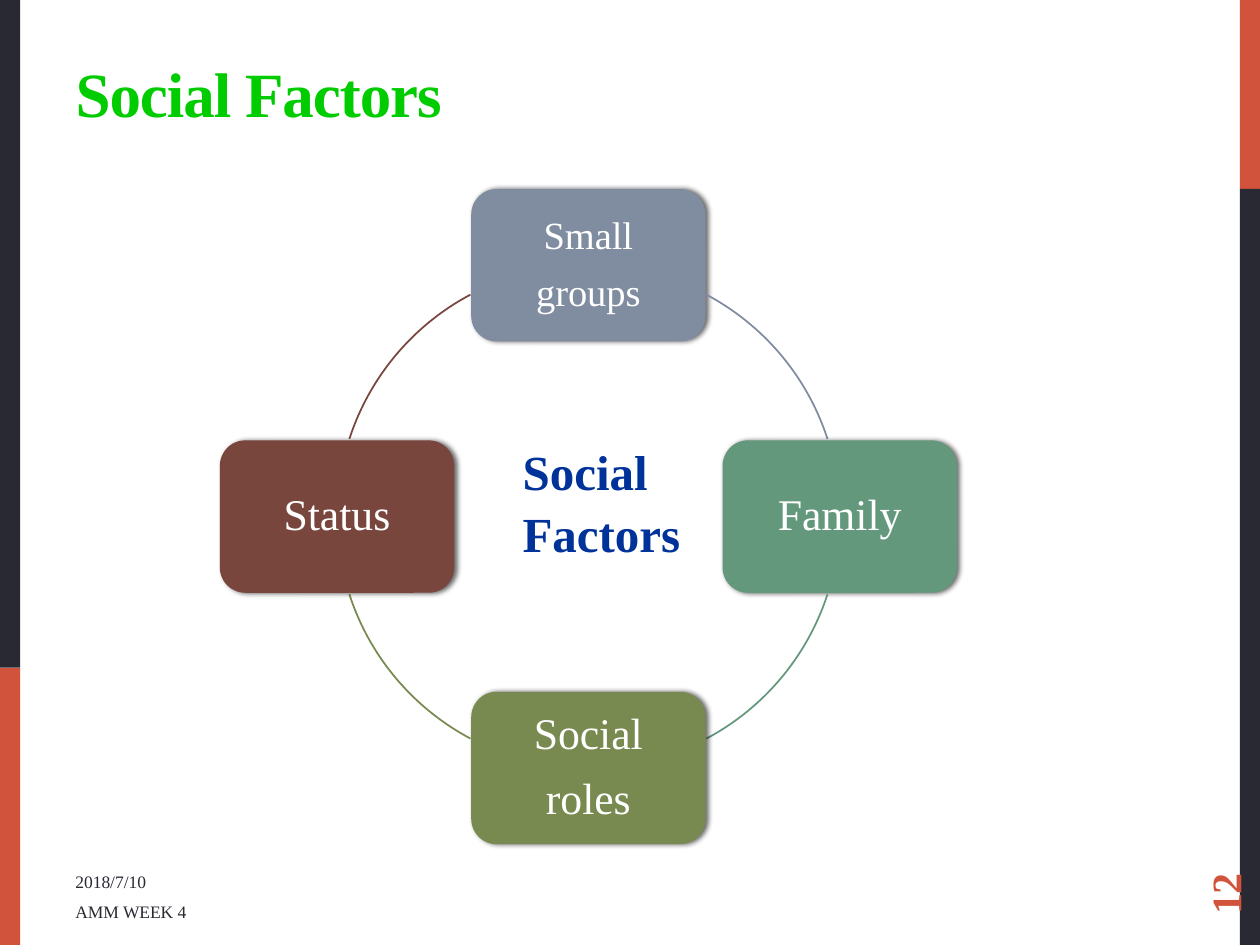
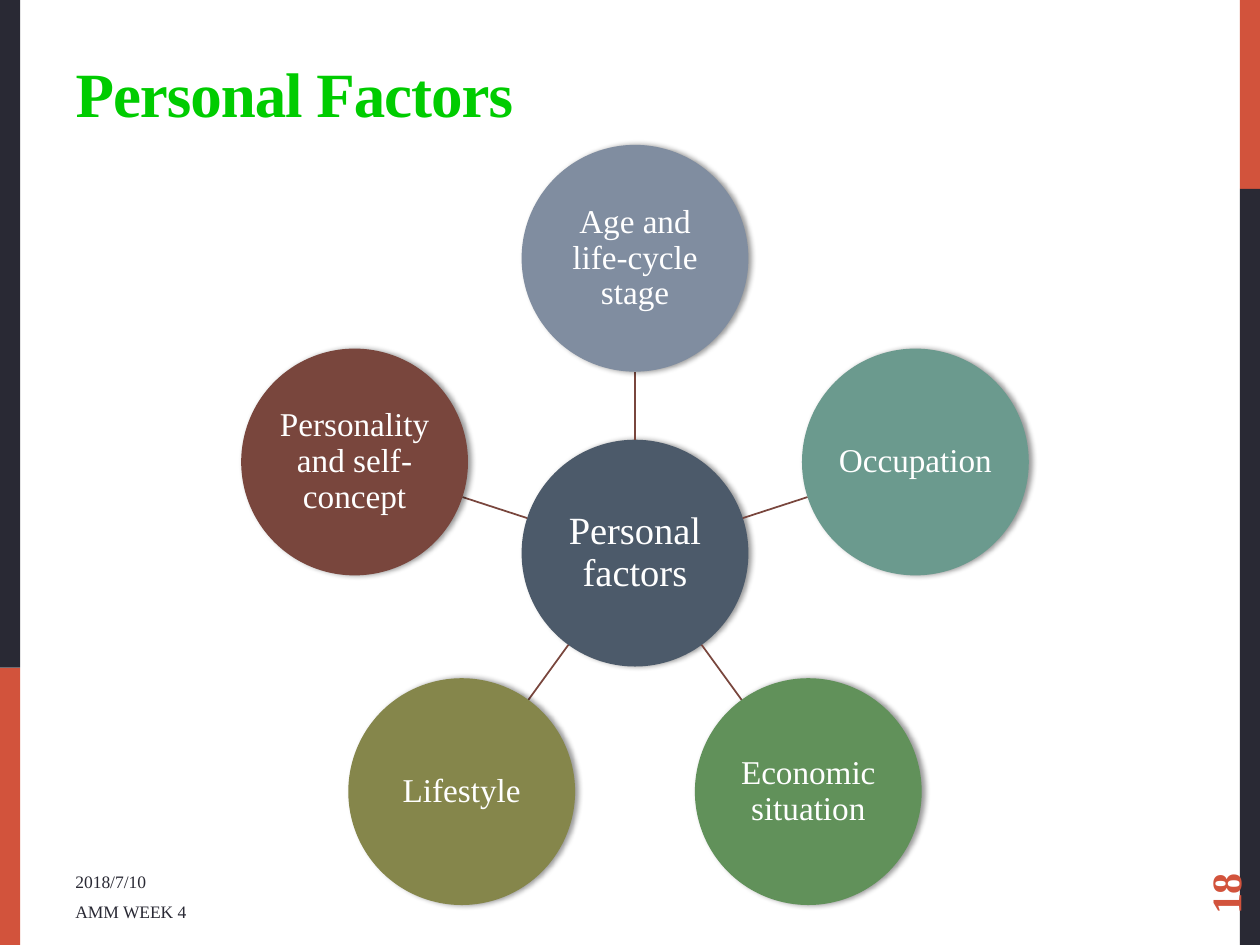
from math import cos, radians, sin

from lxml import etree
from pptx import Presentation
from pptx.dml.color import RGBColor
from pptx.enum.shapes import MSO_CONNECTOR, MSO_SHAPE
from pptx.enum.text import MSO_ANCHOR, MSO_AUTO_SIZE, PP_ALIGN
from pptx.oxml.ns import qn
from pptx.util import Inches, Pt

RECT, ROUNDED = MSO_SHAPE.RECTANGLE, MSO_SHAPE.ROUNDED_RECTANGLE
ELLIPSE, ARC = MSO_SHAPE.OVAL, MSO_SHAPE.ARC
STRAIGHT = MSO_CONNECTOR.STRAIGHT
TOP, MIDDLE, BOTTOM = MSO_ANCHOR.TOP, MSO_ANCHOR.MIDDLE, MSO_ANCHOR.BOTTOM
LEFT, CENTER = PP_ALIGN.LEFT, PP_ALIGN.CENTER

FONT = "Times New Roman"
COLORS = {
    "white": "FFFFFF", "dark": "292934", "accent": "D2533C",
    "title": "00CC00", "blue": "003399", "slate": "808DA0",
    "green": "64987C", "olive": "788A50", "brown": "79463D",
    "navy": "4C5A6A", "teal": "6B9A8E", "leaf": "61915A", "moss": "85864B",
}
COLS, ROWS = 100, 75  # grid of the whole slide
TITLE_ONLY = 5


def color(name):
    return RGBColor.from_string(COLORS[name])


def polar(center, radius, angle):
    """Point at a clockwise angle in degrees, with 0 pointing right."""
    a = radians(angle)
    return center[0] + radius * cos(a), center[1] + radius * sin(a)


class Deck:
    """Holds the style and the current slide; lengths are grid columns and rows."""

    def __init__(self):
        self.prs = Presentation()
        self.prs.slide_width, self.prs.slide_height = Inches(10), Inches(7.5)
        self.s = None

    def x(self, cols):
        return round(self.prs.slide_width * cols / COLS)

    def y(self, rows):
        return round(self.prs.slide_height * rows / ROWS)

    def box(self, left, top, width, height):
        return self.x(left), self.y(top), self.x(width), self.y(height)

    def new_slide(self, title, number):
        self.s = self.prs.slides.add_slide(self.prs.slide_layouts[TITLE_ONLY])
        for left, top, height, fill in (
            (98.4, 0, 15, "accent"), (98.4, 15, 60, "dark"),
            (0, 53, 22, "accent"), (0, 0, 53, "dark"),
        ):
            self.shape(RECT, (left, top, 1.6, height), fill)
        self.title(title)
        self.text("2018/7/10", (5, 67.5, 37.5, 3.3), 10, "dark",
                  anchor=BOTTOM).text_frame.margin_bottom = 0
        self.text("AMM WEEK 4", (5, 71, 37.5, 3.1), 10, "dark")
        self.text(number, (90, 64.4, 14.4, 4), 24, "accent", bold=True,
                  anchor=MIDDLE).rotation = 270

    def format(self, tf, size, fill, bold=False, align=LEFT, spacing=None, after=None):
        for p in tf.paragraphs:
            p.alignment, p.line_spacing, p.space_after = align, spacing, after
            for r in p.runs:
                r.font.name, r.font.size, r.font.bold = FONT, Pt(size), bold
                r.font.color.rgb = color(fill)

    def title(self, text):
        sp = self.s.shapes.title
        sp.left, sp.top, sp.width, sp.height = self.box(5, 1.7, 76.5, 9.1)
        tf = sp.text_frame
        tf.text = text
        tf.auto_size, tf.vertical_anchor = MSO_AUTO_SIZE.NONE, BOTTOM
        self.format(tf, 36, "title", bold=True)
        for r in tf.paragraphs[0].runs:
            r.font._element.set("spc", "-60")

    def text(self, text, box, size, fill, bold=False, anchor=TOP, wrap=True, spacing=None):
        sp = self.s.shapes.add_textbox(*self.box(*box))
        tf = sp.text_frame
        tf.text = text
        tf.word_wrap, tf.vertical_anchor = wrap, anchor
        self.format(tf, size, fill, bold, spacing=spacing)
        return sp

    def shape(self, kind, box, fill):
        sp = self.s.shapes.add_shape(kind, *self.box(*box))
        sp.shadow.inherit = False
        sp.fill.solid()
        sp.fill.fore_color.rgb = color(fill)
        sp.line.fill.background()
        return sp

    def node(self, kind, center, size, fill, text, points, inset, shadow):
        """Filled shape centred on a point; shadow is opacity %, blur and distance."""
        (cx, cy), (w, h) = center, size
        sp = self.shape(kind, (cx - w / 2, cy - h / 2, w, h), fill)
        self.cast_shadow(sp, *shadow)
        tf = sp.text_frame
        tf.text = text
        tf.word_wrap, tf.vertical_anchor = True, MIDDLE
        tf.margin_left = tf.margin_right = self.x(inset)
        tf.margin_top = tf.margin_bottom = self.y(inset)
        self.format(tf, points, "white", align=CENTER, spacing=0.9, after=Pt(0.4 * points))

    def cast_shadow(self, sp, opacity, blur, distance):
        effects = sp._element.spPr.find(qn("a:effectLst"))
        outer = etree.SubElement(effects, qn("a:outerShdw"), blurRad=str(Pt(blur)),
                                 dist=str(Pt(distance)), dir="0", rotWithShape="0")
        black = etree.SubElement(outer, qn("a:srgbClr"), val="000000")
        etree.SubElement(black, qn("a:alpha"), val=str(opacity * 1000))

    def arc(self, center, radius, start, end, fill):
        cx, cy = center
        sp = self.s.shapes.add_shape(
            ARC, *self.box(cx - radius, cy - radius, 2 * radius, 2 * radius))
        sp.shadow.inherit = False
        sp.fill.background()
        sp.line.color.rgb, sp.line.width = color(fill), Pt(1)
        for i, angle in enumerate((start, end)):
            sp.adjustments[i] = angle % 360 * 0.6  # 60000 units a degree, scaled by 100000

    def line(self, start, end, fill):
        (x1, y1), (x2, y2) = start, end
        c = self.s.shapes.add_connector(
            STRAIGHT, self.x(x1), self.y(y1), self.x(x2), self.y(y2))
        c.line.color.rgb, c.line.width = color(fill), Pt(1)
        etree.SubElement(c._element.spPr, qn("a:effectLst"))


def social_factors(deck):
    deck.new_slide("Social Factors", "12")
    center, radius = (46.7, 41), 19.95
    gaps = (28, 18)  # degrees hidden by a box at top or bottom, and at a side
    factors = (("Small\ngroups", 22, "slate"), ("Family", 25, "green"),
               ("Social\nroles", 25, "olive"), ("Status", 25, "brown"))
    for i, (name, points, fill) in enumerate(factors):
        angle = 90 * i - 90
        deck.node(ROUNDED, polar(center, radius, angle), (18.6, 12.1), fill,
                  name, points, 1, (60, 3, 1.5))
        deck.arc(center, radius, angle + gaps[i % 2], angle + 90 - gaps[(i + 1) % 2], fill)
    deck.text("Social\nFactors", (40.5, 34.3, 14.7, 10.4), 28, "blue",
              bold=True, wrap=False, spacing=1.05)


def personal_factors(deck):
    deck.new_slide("Personal Factors", "18")
    center, radius, diameter = (50.4, 43.9), 23.4, 18
    size, shadow = (diameter, diameter), (40, 3.1, 1.8)
    deck.node(ELLIPSE, center, size, "navy", "Personal factors", 22, 0.2, shadow)
    factors = (("Age and life-cycle stage", "slate"), ("Occupation", "teal"),
               ("Economic situation", "leaf"), ("Lifestyle", "moss"),
               ("Personality and self-concept", "brown"))
    for i, (name, fill) in enumerate(factors):
        angle = 360 / len(factors) * i - 90
        deck.line(polar(center, diameter / 2, angle),
                  polar(center, radius - diameter / 2, angle), "brown")
        deck.node(ELLIPSE, polar(center, radius, angle), size, fill, name, 19, 0.1, shadow)


def main():
    deck = Deck()
    social_factors(deck)
    personal_factors(deck)
    deck.prs.save("out.pptx")


if __name__ == "__main__":
    main()
